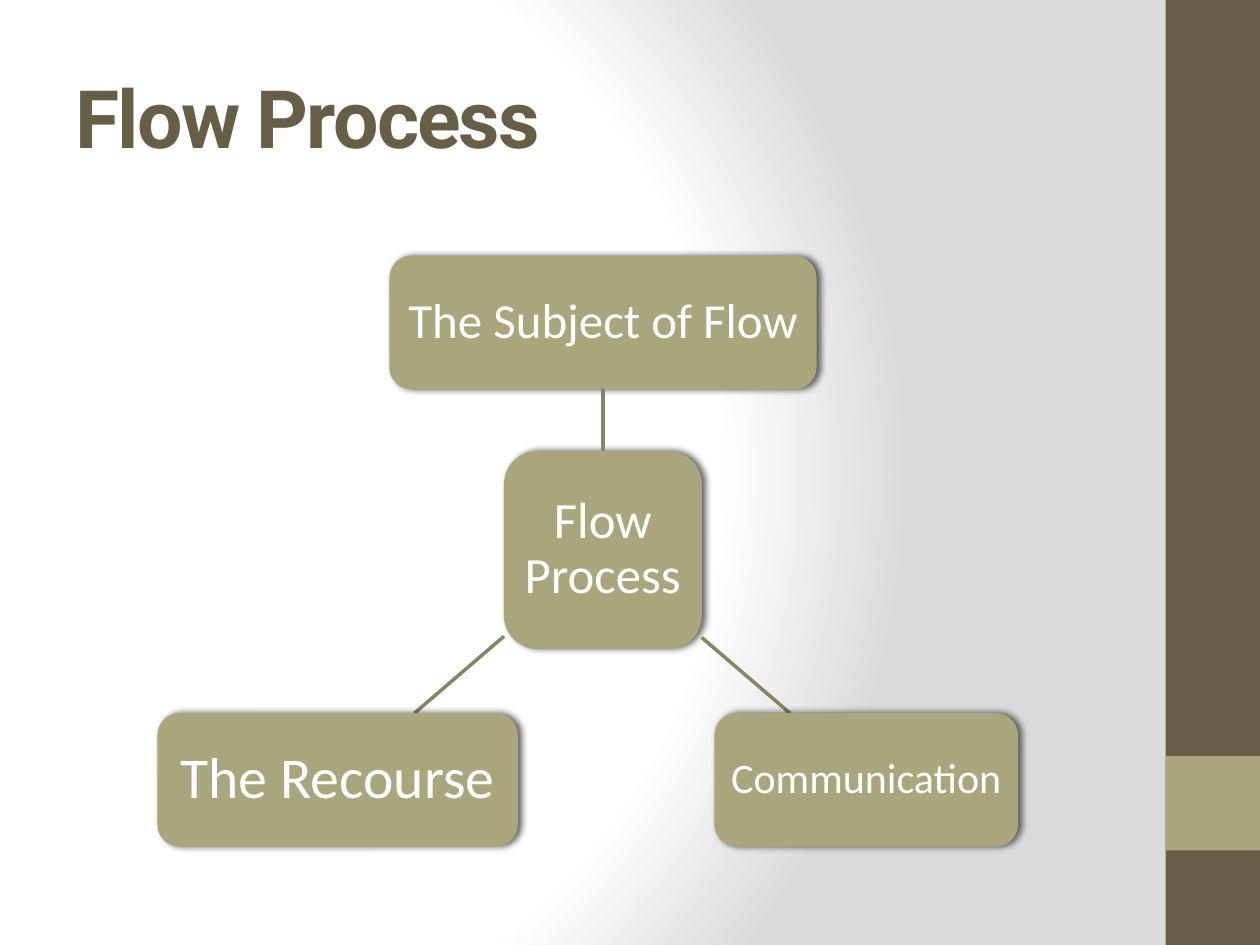
from lxml import etree
from pptx import Presentation
from pptx.dml.color import RGBColor
from pptx.enum.shapes import MSO_CONNECTOR, MSO_SHAPE
from pptx.enum.text import MSO_ANCHOR, PP_ALIGN
from pptx.oxml import parse_xml
from pptx.oxml.ns import nsdecls, qn
from pptx.util import Inches, Pt

RECT, ROUND = MSO_SHAPE.RECTANGLE, MSO_SHAPE.ROUNDED_RECTANGLE
LINE = MSO_CONNECTOR.STRAIGHT
MIDDLE, CENTER = MSO_ANCHOR.MIDDLE, PP_ALIGN.CENTER
BROWN, SAGE, OLIVE, WHITE = "675E47", "A9A57C", "878463", "FFFFFF"

TITLE = "Flow Process"
BANDS = [((9.25, 0, 0.75, 7.5), BROWN), ((9.25, 6, 0.75, 0.75), SAGE)]
# text, place, type size, inset
HUB = ("Flow Process", (4, 3.58, 1.57, 1.57), 29, 0.08)
TOP = ("The Subject of Flow", (3.09, 2.03, 3.39, 1.06), 28, 0.08)
# the same, with the ends of the line from the hub
LOWER = [
    (("Communication", (5.67, 5.66, 2.41, 1.06), 24, 0.07),
     (5.57, 5.06, 6.27, 5.66)),
    (("The Recourse", (1.25, 5.66, 2.86, 1.06), 33, 0.09),
     (4, 5.05, 3.29, 5.66)),
]

BACK = f"""<p:bg {nsdecls("p", "a")}><p:bgPr><a:gradFill rotWithShape="1">
<a:gsLst><a:gs pos="0"><a:srgbClr val="FFFFFF"/></a:gs>
<a:gs pos="75000"><a:srgbClr val="FFFFFF"/></a:gs>
<a:gs pos="100000"><a:srgbClr val="DADADA"/></a:gs></a:gsLst>
<a:path path="circle"><a:fillToRect l="20000" t="50000" r="100000" b="50000"/>
</a:path></a:gradFill><a:effectLst/></p:bgPr></p:bg>"""
SHADOW = f"""<a:effectLst {nsdecls("a")}>
<a:outerShdw blurRad="{Pt(4)}" dist="{Pt(2)}" dir="0" rotWithShape="0">
<a:srgbClr val="000000"><a:alpha val="60000"/></a:srgbClr>
</a:outerShdw></a:effectLst>"""


def color(code):
    return RGBColor.from_string(code)


def block(slide, kind, place, fill):
    shape = slide.shapes.add_shape(kind, *map(Inches, place))
    shape.shadow.inherit = False
    shape.fill.solid()
    shape.fill.fore_color.rgb = color(fill)
    shape.line.fill.background()
    return shape


def write(frame, text, size, face, ink):
    frame.word_wrap = True
    frame.vertical_anchor = MIDDLE
    par = frame.paragraphs[0]
    par.text = text
    font = par.font
    font.size, font.name = Pt(size), face
    font.color.rgb = color(ink)
    return par


def node(slide, text, place, size, inset):
    """Add a shadowed, rounded box with centred text."""
    shape = block(slide, ROUND, place, SAGE)
    props = shape._element.spPr
    props.replace(props.find(qn("a:effectLst")), parse_xml(SHADOW))
    frame = shape.text_frame
    frame.margin_left = frame.margin_right = Inches(inset)
    frame.margin_top = frame.margin_bottom = Inches(inset)
    par = write(frame, text, size, "Calibri", WHITE)
    par.alignment, par.line_spacing = CENTER, 0.9
    return shape


def link(slide, ends):
    line = slide.shapes.add_connector(LINE, *map(Inches, ends))
    line.line.color.rgb = color(OLIVE)
    line.line.width = Pt(2)
    etree.SubElement(line._element.spPr, qn("a:effectLst"))
    return line


def main():
    deck = Presentation()
    deck.slide_width, deck.slide_height = Inches(10), Inches(7.5)
    slide = deck.slides.add_slide(deck.slide_layouts[6])
    slide._element.cSld.insert(0, parse_xml(BACK))

    for place, fill in BANDS:
        block(slide, RECT, place, fill)

    box = slide.shapes.add_textbox(*map(Inches, (0.5, 0.3, 8.33, 1.25)))
    par = write(box.text_frame, TITLE, 46, "Roboto", BROWN)
    par.font.bold = True
    par.runs[0].font._element.set("spc", "-100")

    hub = node(slide, *HUB)
    top = node(slide, *TOP)
    stem = link(slide, (0, 0, 0, 0))
    stem.begin_connect(hub, 0)
    stem.end_connect(top, 2)
    for spot, ends in LOWER:
        link(slide, ends)
        node(slide, *spot)

    deck.save("out.pptx")


if __name__ == "__main__":
    main()
